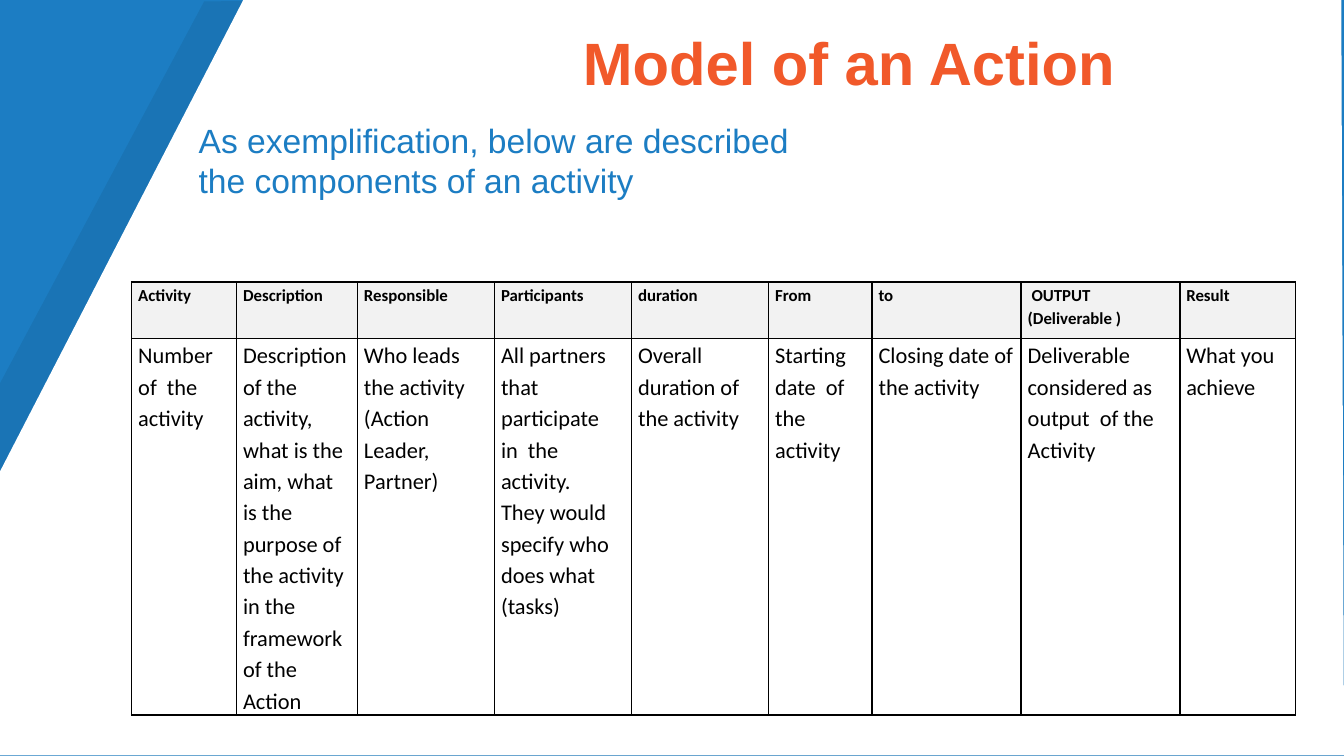
from dataclasses import dataclass

import lxml.etree
import pptx
import pptx.dml.color
import pptx.enum.text
import pptx.oxml.ns
import pptx.util
from pptx.util import Inches

BLUE = "1C7DC3"
ORANGE = "F1592A"
BLACK = "000000"
HEADER_GREY = "F2F2F2"


@dataclass
class Panel:
    points: list[tuple[float, float]]
    color: str
    opacity: int = 100


@dataclass
class Column:
    width: float
    heading: str
    body: str


PANELS = [
    Panel([(9.98, 0), (10, 5.63), (-1.48, 5.62), (1.52, 0.01)], BLACK, 7),
    Panel([(9.98, 0), (10, 5.62), (-1.09, 5.62), (1.81, 0)], "FFFFFF"),
]

COLUMNS = [
    Column(0.78, "Activity", "Number of  the activity"),
    Column(0.9, "Description", "Description of the activity,\nwhat is the aim, what is the purpose "
           "of the activity  in the framework of the Action"),
    Column(1.02, "Responsible", "Who leads the activity  (Action Leader, Partner)"),
    Column(1.02, "Participants", "All partners that participate  in  the activity.\n"
           "They would specify who does what (tasks)"),
    Column(1.02, "duration", "Overall  duration of the activity"),
    Column(0.77, "From", "Starting  date  of the activity"),
    Column(1.11, "to", "Closing date of the activity"),
    Column(1.18, " OUTPUT (Deliverable )", "Deliverable considered as output  of the Activity"),
    Column(0.86, "Result", "What you  achieve"),
]


def rgb(color: str) -> pptx.dml.color.RGBColor:
    return pptx.dml.color.RGBColor.from_string(color)


def add_element(parent, tag: str, **attributes: str):
    return lxml.etree.SubElement(parent, pptx.oxml.ns.qn(tag), attributes)


def format_text(text_frame, font_name: str, size: float, color: str, bold: bool = False) -> None:
    for paragraph in text_frame.paragraphs:
        for run in paragraph.runs:
            run.font.name = font_name
            run.font.size = pptx.util.Pt(size)
            run.font.bold = bold
            run.font.color.rgb = rgb(color)


def draw_panel(slide, panel: Panel) -> None:
    points = [(Inches(x), Inches(y)) for x, y in panel.points]
    builder = slide.shapes.build_freeform(*points[0], scale=1.0)
    builder.add_line_segments(points[1:], close=True)
    shape = builder.convert_to_shape()
    shape.shadow.inherit = False
    shape.fill.solid()
    shape.fill.fore_color.rgb = rgb(panel.color)
    shape.line.fill.background()
    if panel.opacity < 100:
        color_element = shape.element.spPr.find(".//" + pptx.oxml.ns.qn("a:srgbClr"))
        add_element(color_element, "a:alpha", val=str(panel.opacity * 1000))


def draw_borders(cell) -> None:
    properties = cell._tc.get_or_add_tcPr()
    for index, side in enumerate(("L", "R", "T", "B")):
        border = add_element(properties, f"a:ln{side}", w=str(pptx.util.Pt(1)))
        fill = add_element(border, "a:solidFill")
        add_element(fill, "a:srgbClr", val=BLACK)
        properties.insert(index, border)


def fill_cell(cell, text: str, header: bool) -> None:
    cell.margin_left = cell.margin_right = pptx.util.Pt(3.5)
    cell.margin_top = cell.margin_bottom = 0
    cell.text_frame.text = text
    for paragraph in cell.text_frame.paragraphs:
        paragraph.line_spacing = 1.15
    format_text(cell.text_frame, "Calibri", 9 if header else 12, BLACK, bold=header)
    if header:
        cell.fill.solid()
        cell.fill.fore_color.rgb = rgb(HEADER_GREY)
    else:
        cell.fill.background()
    draw_borders(cell)


def draw_table(slide, columns: list[Column]) -> None:
    width = sum(column.width for column in columns)
    frame = slide.shapes.add_table(2, len(columns), Inches(0.98), Inches(2.1),
                                   Inches(width), Inches(3.15))
    table = frame.table
    table.horz_banding = False
    table.first_row = False
    table.rows[0].height = Inches(0.42)
    table.rows[1].height = Inches(2.73)
    for index, column in enumerate(columns):
        table.columns[index].width = Inches(column.width)
        fill_cell(table.cell(0, index), column.heading, header=True)
        fill_cell(table.cell(1, index), column.body, header=False)


def place_title(slide, text: str) -> None:
    title = slide.shapes.title
    title.left, title.top = Inches(0.59), Inches(-0.01)
    title.width, title.height = Inches(7.81), Inches(0.94)
    text_frame = title.text_frame
    text_frame.text = text
    text_frame.auto_size = pptx.enum.text.MSO_AUTO_SIZE.NONE
    text_frame.vertical_anchor = pptx.enum.text.MSO_ANCHOR.MIDDLE
    text_frame.paragraphs[0].alignment = pptx.enum.text.PP_ALIGN.RIGHT
    format_text(text_frame, "Arial", 32, ORANGE, bold=True)
    title.element.getparent().append(title.element)


def draw_introduction(slide, text: str) -> None:
    box = slide.shapes.add_textbox(Inches(1.38), Inches(0.84), Inches(5), Inches(0.71))
    box.text_frame.word_wrap = True
    box.text_frame.text = text
    format_text(box.text_frame, "Arial", 18, BLUE)


def main() -> None:
    presentation = pptx.Presentation()
    presentation.slide_width = Inches(10)
    presentation.slide_height = Inches(10 * 9 / 16)
    slide = presentation.slides.add_slide(presentation.slide_layouts[5])
    slide.background.fill.solid()
    slide.background.fill.fore_color.rgb = rgb(BLUE)
    for panel in PANELS:
        draw_panel(slide, panel)
    place_title(slide, "Model of an Action")
    draw_table(slide, COLUMNS)
    draw_introduction(slide, "As exemplification, below are described the components of an activity")
    presentation.save("out.pptx")


if __name__ == "__main__":
    main()
